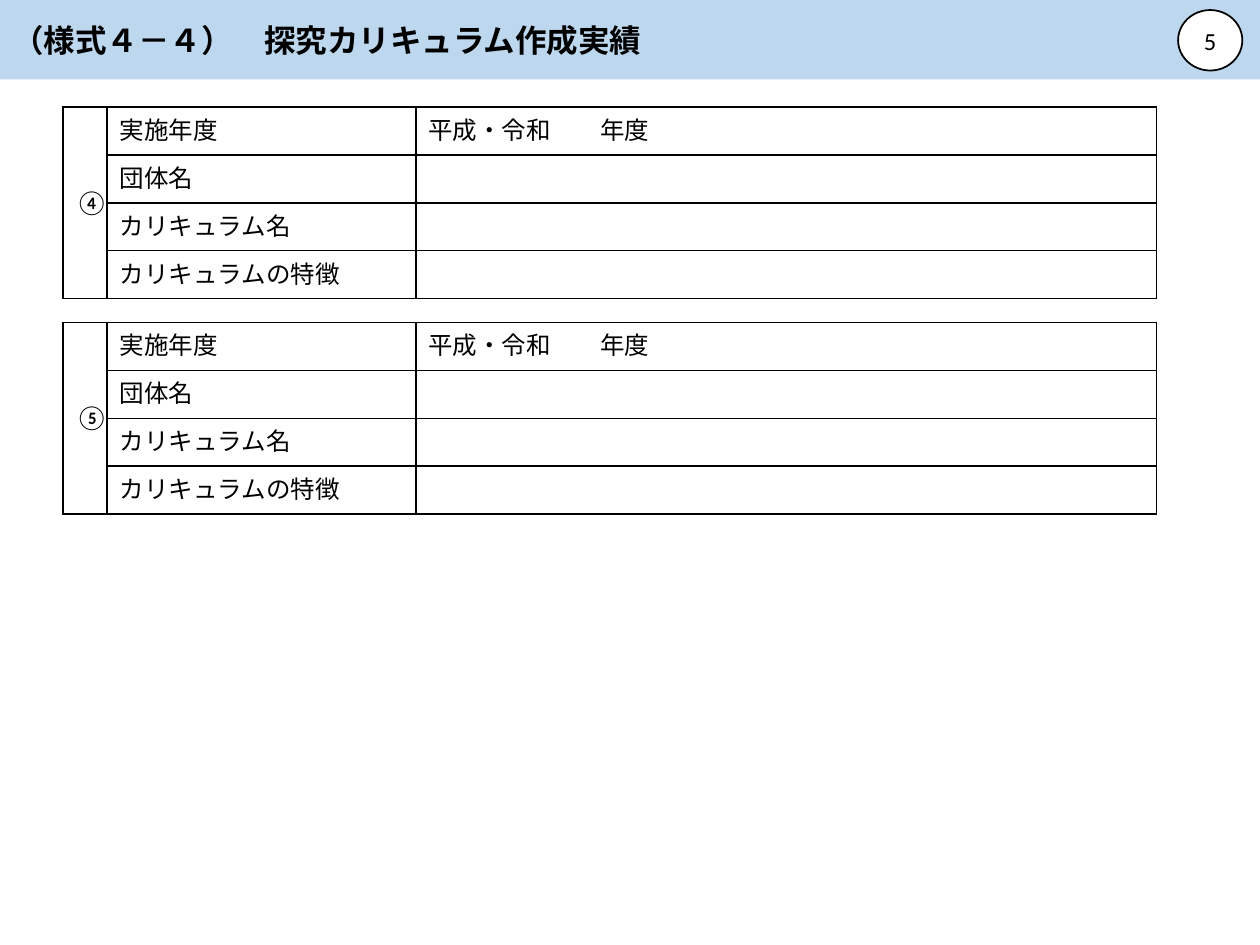
"""Build the form 4-4 slide: a title band, a page badge and two record tables."""
from dataclasses import dataclass

from lxml import etree
from pptx import Presentation
from pptx import util as u
from pptx.dml.color import RGBColor
from pptx.enum import lang, shapes, text
from pptx.oxml import ns

TITLE = "（様式４－４）　探究カリキュラム作成実績"
PAGE = "5"
RECORDS = ["④", "⑤"]
FIELDS = [
    ("実施年度", "平成・令和　　年度"),
    ("団体名", ""),
    ("カリキュラム名", ""),
    ("カリキュラムの特徴", ""),
]

WIDTH, HEIGHT = 10, 7.5
BAND_HEIGHT = 0.63
BADGE = (9.35, 0.08, 0.51, 0.48)
COLUMNS = (0.35, 2.45, 5.88)
ROW = 0.38
LEFT, TOP, PITCH = 0.5, 0.85, 1.71


@dataclass(frozen=True)
class Theme:
    band: RGBColor = RGBColor.from_string("BDD7EE")
    paper: RGBColor = RGBColor.from_string("FFFFFF")
    ink: RGBColor = RGBColor.from_string("000000")
    title_font: str = "Noto Sans CJK JP"
    body_font: str = "Calibri"
    title_size: int = 18
    body_size: int = 14
    line: int = 1


THEME = Theme()


def write(frame, words, font, size, bold=False, align=text.PP_ALIGN.LEFT):
    paragraph = frame.paragraphs[0]
    paragraph.alignment = align
    run = paragraph.add_run()
    run.text = words
    run.font.name, run.font.size, run.font.bold = font, u.Pt(size), bold
    run.font.color.rgb = THEME.ink
    run.font.language_id = lang.MSO_LANGUAGE_ID.JAPANESE
    latin = run.font._element.find(ns.qn("a:latin"))
    latin.addnext(latin.makeelement(ns.qn("a:ea"), {"typeface": font}))


def add_label(slide, kind, box, fill, words, outlined=False, **style):
    label = slide.shapes.add_shape(kind, *map(u.Inches, box))
    label.shadow.inherit = False
    label.fill.solid()
    label.fill.fore_color.rgb = fill
    if outlined:
        label.line.color.rgb = THEME.ink
        label.line.width = u.Pt(THEME.line)
    else:
        label.line.fill.background()
    label.text_frame.word_wrap = True
    label.text_frame.vertical_anchor = text.MSO_ANCHOR.MIDDLE
    write(label.text_frame, words, **style)


def border(cell):
    properties = cell._tc.get_or_add_tcPr()
    for place, side in enumerate(("lnL", "lnR", "lnT", "lnB")):
        edge = etree.Element(ns.qn(f"a:{side}"), w=str(u.Pt(THEME.line)))
        paint = etree.SubElement(edge, ns.qn("a:solidFill"))
        etree.SubElement(paint, ns.qn("a:srgbClr"), val=str(THEME.ink))
        properties.insert(place, edge)


def fill_cell(cell, words):
    cell.fill.background()
    cell.vertical_anchor = text.MSO_ANCHOR.MIDDLE
    border(cell)
    if words:
        write(cell.text_frame, words, THEME.body_font, THEME.body_size)
    else:
        paragraph = cell.text_frame.paragraphs[0]._p
        etree.SubElement(paragraph, ns.qn("a:endParaRPr"), sz=str(THEME.body_size * 100))


def add_record(slide, number, top):
    box = (LEFT, top, sum(COLUMNS), ROW * len(FIELDS))
    record = slide.shapes.add_table(len(FIELDS), len(COLUMNS), *map(u.Inches, box)).table
    record.first_row = record.horz_banding = False
    for column, width in zip(record.columns, COLUMNS):
        column.width = u.Inches(width)
    for index, field in enumerate(FIELDS):
        record.rows[index].height = u.Inches(ROW)
        for column, words in enumerate(("" if index else number, *field)):
            fill_cell(record.cell(index, column), words)
    record.cell(0, 0).merge(record.cell(len(FIELDS) - 1, 0))


def main():
    deck = Presentation()
    deck.slide_width, deck.slide_height = u.Inches(WIDTH), u.Inches(HEIGHT)
    slide = deck.slides.add_slide(deck.slide_layouts[6])
    add_label(slide, shapes.MSO_SHAPE.RECTANGLE, (0, 0, WIDTH, BAND_HEIGHT), THEME.band,
              TITLE, font=THEME.title_font, size=THEME.title_size, bold=True)
    for index, number in enumerate(RECORDS):
        add_record(slide, number, TOP + index * PITCH)
    add_label(slide, shapes.MSO_SHAPE.OVAL, BADGE, THEME.paper, PAGE, outlined=True,
              font=THEME.body_font, size=THEME.body_size, align=text.PP_ALIGN.CENTER)
    deck.save("out.pptx")


if __name__ == "__main__":
    main()
